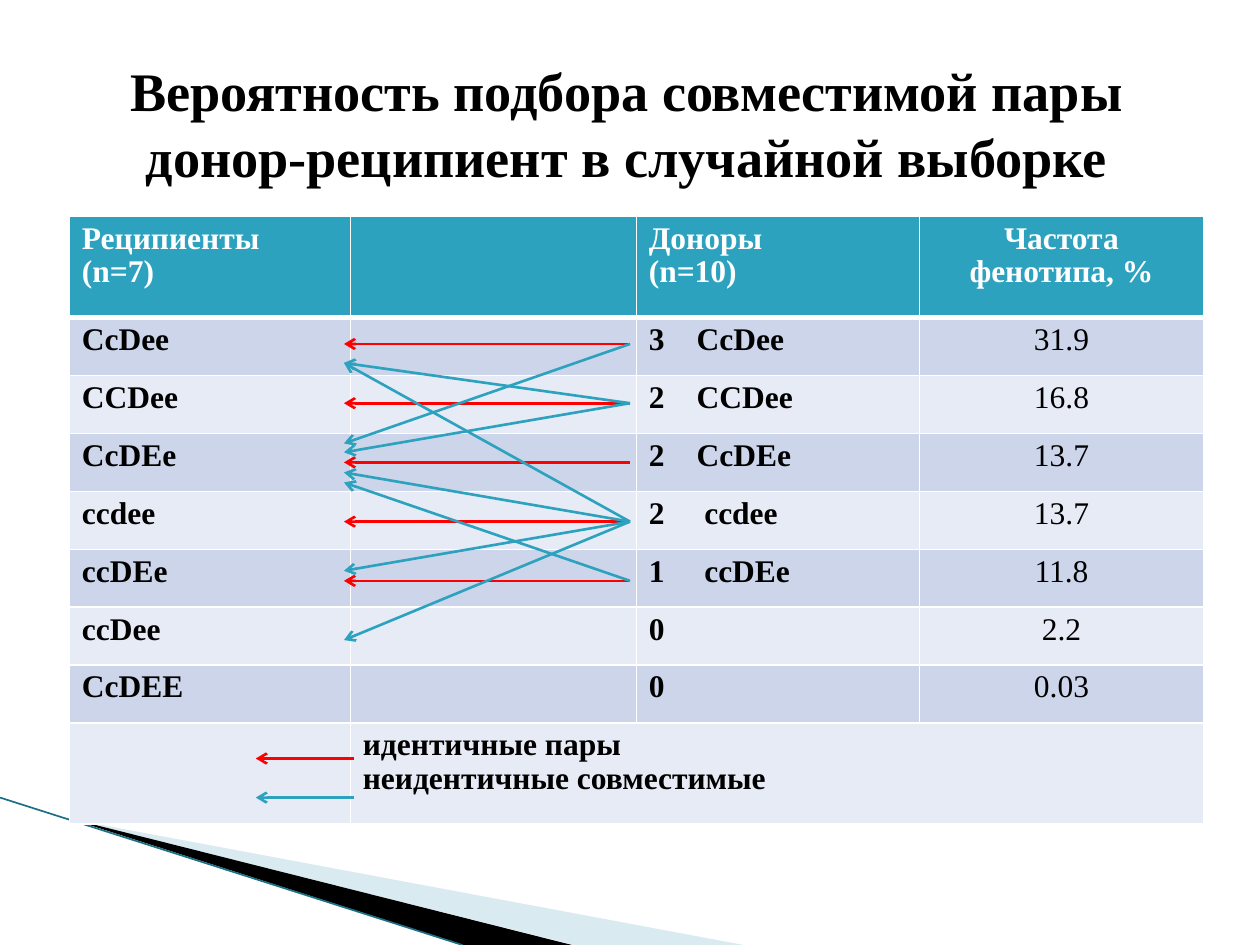
from typing import NamedTuple, Optional

from lxml.etree import SubElement
from pptx import Presentation
from pptx.dml.color import RGBColor
from pptx.enum.shapes import MSO_CONNECTOR as Conn
from pptx.enum.text import MSO_ANCHOR as Anchor, PP_ALIGN as Align
from pptx.oxml.ns import qn
from pptx.util import Inches, Pt

WIDTH, HEIGHT = 10, 7.5
FONT = "Times New Roman"
BLACK = RGBColor(0, 0, 0)
WHITE = RGBColor(255, 255, 255)
RED = RGBColor(255, 0, 0)
TEAL = RGBColor(0x2D, 0xA2, 0xBF)
MIST = RGBColor(0xA0, 0xCB, 0xDC)
EDGE = RGBColor(0x1B, 0x70, 0x85)
BANDS = (RGBColor(0xE7, 0xEB, 0xF5), RGBColor(0xCC, 0xD5, 0xEA))

LEFT, TOP = 0.55, 1.72
COLS = (2.23, 2.27, 2.25, 2.25)
ROWS = (0.8, *[0.46] * 7, 0.8)
LANE_TOP, LANE = 2.73, 0.47
DONOR_X, RECIPIENT_X = 5, 2.73
KEY_FROM, KEY_TO = 2.81, 2.03


class Phenotype(NamedTuple):
    name: str
    donors: int
    share: str
    numbered: bool = False


class Pair(NamedTuple):
    donor: float
    recipient: float
    color: RGBColor = TEAL


class Wedge(NamedTuple):
    points: tuple
    color: RGBColor
    opacity: int


PHENOTYPES = (
    Phenotype("CcDee", 3, "31.9", True),
    Phenotype("CCDee", 2, "16.8", True),
    Phenotype("CcDEe", 2, "13.7", True),
    Phenotype("ccdee", 2, "13.7"),
    Phenotype("ccDEe", 1, "11.8"),
    Phenotype("ccDee", 0, "2.2"),
    Phenotype("CcDEE", 0, "0.03"),
)
PAIRS = (
    *(Pair(i, i, RED) for i in range(5)),
    Pair(0, 1.68), Pair(1, 0.32), Pair(1, 1.83), Pair(3, 0.32),
    Pair(3, 2.17), Pair(3, 3.83), Pair(3, 5), Pair(4, 2.34),
)
WEDGES = (
    Wedge(((0.55, 6.5), (5.9, HEIGHT), (4.56, HEIGHT)), MIST, 40),
    Wedge(((0.53, 6.49), (4.54, HEIGHT), (3.68, HEIGHT)), BLACK, 100),
)


def write(tf, text: str, size: float = 18, bold: bool = True, color: RGBColor = BLACK,
          align: Align = Align.LEFT, spacing: Optional[float] = None,
          start: Optional[int] = None, tab: Optional[float] = None) -> None:
    """Fill a text frame, one paragraph per line of text."""
    for i, line in enumerate(text.split("\n")):
        p = tf.paragraphs[0] if i == 0 else tf.add_paragraph()
        pPr = p._p.get_or_add_pPr()
        if start:
            pPr.set("marL", str(Inches(0.38)))
            pPr.set("indent", str(-Inches(0.38)))
            SubElement(pPr, qn("a:buAutoNum"), type="arabicPlain", startAt=str(start))
        if tab:
            stops = SubElement(pPr, qn("a:tabLst"))
            SubElement(stops, qn("a:tab"), pos=str(Inches(tab)), algn="l")
        p.alignment = align
        if spacing:
            p.line_spacing = spacing
        r = p.add_run()
        r.text = line
        r.font.name, r.font.size, r.font.bold = FONT, Pt(size), bold
        r.font.color.rgb = color


def add_line(s, start: tuple, end: tuple, color: RGBColor,
             width: float = 1.5, arrow: bool = True) -> None:
    """Draw a straight line with an optional arrowhead at its end."""
    c = s.shapes.add_connector(Conn.STRAIGHT, *map(Inches, (*start, *end)))
    c.line.color.rgb, c.line.width = color, Pt(width)
    if arrow:
        SubElement(c.line._get_or_add_ln(), qn("a:tailEnd"), type="arrow")
    SubElement(c._element.spPr, qn("a:effectLst"))


def add_wedge(s, wedge: Wedge) -> None:
    """Draw one filled triangle of the corner ornament."""
    first, *rest = [tuple(map(Inches, point)) for point in wedge.points]
    builder = s.shapes.build_freeform(*first)
    builder.add_line_segments(rest, close=True)
    sp = builder.convert_to_shape()
    sp.shadow.inherit = False
    sp.line.fill.background()
    sp.fill.solid()
    sp.fill.fore_color.rgb = wedge.color
    if wedge.opacity < 100:
        clr = sp._element.spPr.find(".//" + qn("a:srgbClr"))
        SubElement(clr, qn("a:alpha"), val=str(wedge.opacity * 1000))


def style_cell(cell, row: int) -> None:
    """Give a cell its white borders and its band colour."""
    tcPr = cell._tc.get_or_add_tcPr()
    thick = {0: "lnB", 1: "lnT"}.get(row)
    for side in ("lnL", "lnR", "lnT", "lnB"):
        ln = SubElement(tcPr, qn("a:" + side), w=str(Pt(3 if side == thick else 1)))
        SubElement(SubElement(ln, qn("a:solidFill")), qn("a:srgbClr"), val=str(WHITE))
    cell.fill.solid()
    cell.fill.fore_color.rgb = BANDS[row % 2] if row else TEAL


def add_phenotypes(s) -> None:
    """Build the table of recipients, donors and frequencies."""
    frame = s.shapes.add_table(len(ROWS), len(COLS), *map(Inches, (LEFT, TOP, sum(COLS), sum(ROWS))))
    table = frame.table
    for column, width in zip(table.columns, COLS):
        column.width = Inches(width)
    for i, height in enumerate(ROWS):
        table.rows[i].height = Inches(height)
        for j in range(len(COLS)):
            style_cell(table.cell(i, j), i)

    def put(i: int, j: int, text: str, **style) -> None:
        """Write into one cell."""
        write(table.cell(i, j).text_frame, text, spacing=0.95, **style)

    put(0, 0, "Реципиенты\n(n=7)", color=WHITE)
    put(0, 2, "Доноры\n(n=10)", color=WHITE)
    put(0, 3, "Частота фенотипа, %", color=WHITE, align=Align.CENTER)
    for i, kind in enumerate(PHENOTYPES, 1):
        put(i, 0, kind.name)
        if kind.numbered:
            put(i, 2, kind.name, start=kind.donors)
        elif kind.donors:
            put(i, 2, f"{kind.donors}\t{kind.name}", tab=0.44)
        else:
            put(i, 2, "0")
        put(i, 3, kind.share, bold=False, align=Align.CENTER)
    last = len(ROWS) - 1
    table.cell(last, 1).merge(table.cell(last, 3))
    put(last, 1, "идентичные пары\nнеидентичные совместимые")


def main() -> None:
    """Build and save the slide."""
    prs = Presentation()
    prs.slide_width, prs.slide_height = Inches(WIDTH), Inches(HEIGHT)
    s = prs.slides.add_slide(prs.slide_layouts[6])
    for wedge in WEDGES:
        add_wedge(s, wedge)
    add_line(s, (0, 6.33), (3.67, HEIGHT), EDGE, width=0.95, arrow=False)
    add_phenotypes(s)
    tf = s.shapes.add_textbox(*map(Inches, (0.47, 0.39, 9, 1.17))).text_frame
    tf.word_wrap, tf.vertical_anchor = True, Anchor.MIDDLE
    write(tf, "Вероятность подбора совместимой пары донор-реципиент в случайной выборке",
          size=31, align=Align.CENTER)
    for pair in PAIRS:
        add_line(s, (DONOR_X, LANE_TOP + LANE * pair.donor),
                 (RECIPIENT_X, LANE_TOP + LANE * pair.recipient), pair.color)
    for y, color in ((6.02, RED), (6.33, TEAL)):
        add_line(s, (KEY_FROM, y), (KEY_TO, y), color)
    prs.save("out.pptx")


if __name__ == "__main__":
    main()
